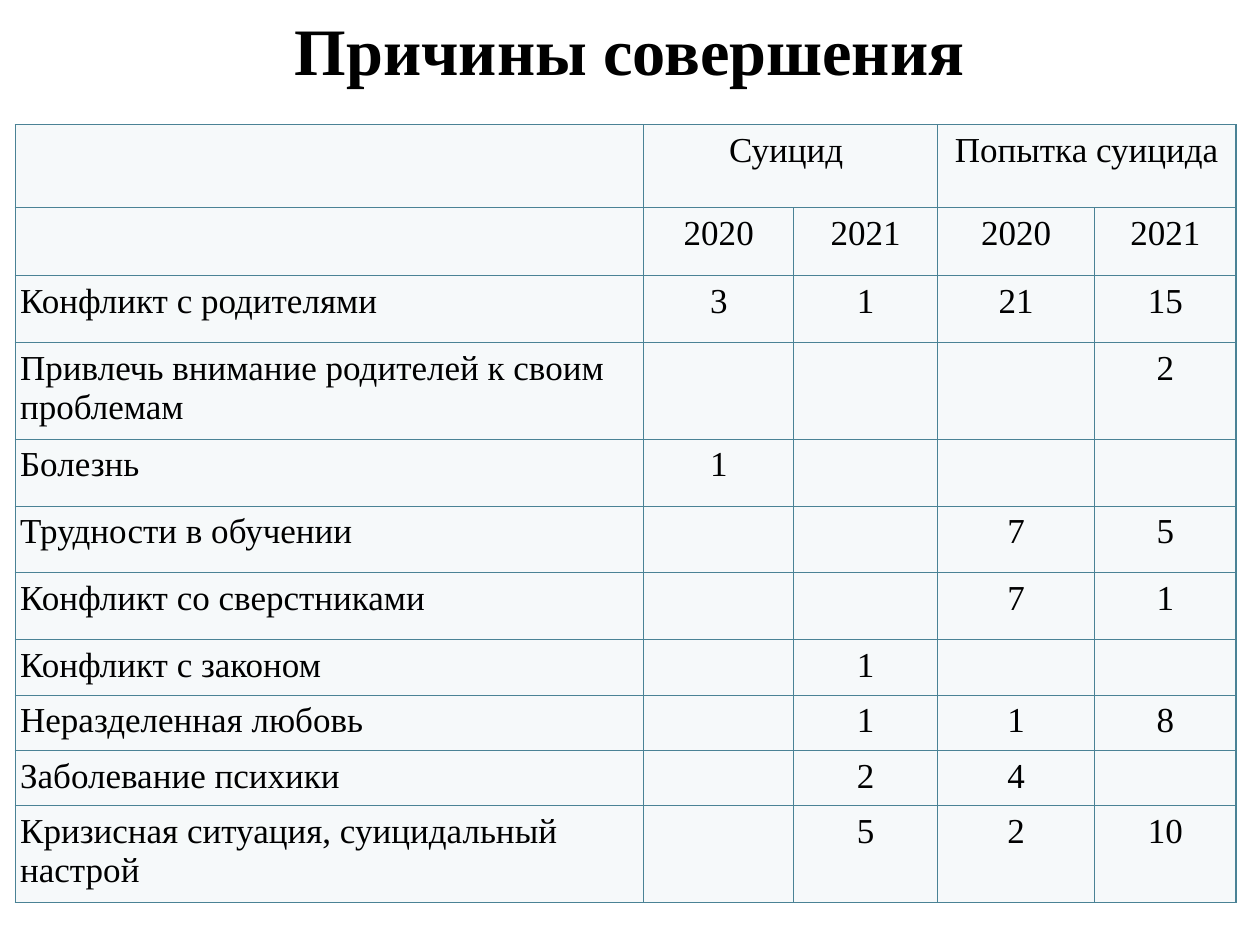
from dataclasses import dataclass

from lxml.etree import SubElement
from pptx import Presentation
from pptx.dml.color import RGBColor
from pptx.enum.text import MSO_ANCHOR, PP_ALIGN
from pptx.oxml.ns import qn
from pptx.util import Inches, Pt


@dataclass(frozen=True)
class Theme:
    font: str = "Times New Roman"
    ink: str = "000000"
    fill: str = "F6F9FA"
    line: str = "4A8295"
    title: float = 37.9
    body: float = 20
    rule: float = 0.75


TITLE = "Причины совершения"
COLS = [4.99, 1.19, 1.14, 1.25, 1.12]
# Height, then the text of each cell
ROWS = [
    (0.66, ["", "Суицид ", "", "Попытка суицида", ""]),
    (0.54, ["", "2020", "2021", "2020", "2021"]),
    (0.53, ["Конфликт с родителями", "3", "1", "21", "15"]),
    (0.66, ["Привлечь внимание родителей к своим проблемам", "", "", "", "2"]),
    (0.53, ["Болезнь", "1", "", "", ""]),
    (0.53, ["Трудности в обучении", "", "", "7", "5"]),
    (0.53, ["Конфликт со сверстниками", "", "", "7", "1"]),
    (0.44, ["Конфликт с законом", "", "1", "", ""]),
    (0.44, ["Неразделенная любовь", "", "1", "1", "8"]),
    (0.44, ["Заболевание психики", "", "2", "4", ""]),
    (0.66, ["Кризисная ситуация, суицидальный настрой", "", "5", "2", "10"]),
]
SPANS = [(0, 1, 2), (0, 3, 4)]  # row, first column, last column


class Page:
    def __init__(self, slide, theme):
        self.slide = slide
        self.theme = theme

    def label(self, frame, text, size, align, bold=False):
        para = frame.paragraphs[0]
        para.text = text
        para.alignment = align
        for run in para.runs:
            font = run.font
            font.name = self.theme.font
            font.size = Pt(size)
            font.bold = bold
            font.color.rgb = RGBColor.from_string(self.theme.ink)
        return para

    def title(self, text, left, top, width, height):
        box = self.slide.shapes.add_textbox(
            Inches(left), Inches(top), Inches(width), Inches(height))
        frame = box.text_frame
        frame.word_wrap = True
        frame.vertical_anchor = MSO_ANCHOR.MIDDLE
        para = self.label(frame, text, self.theme.title, PP_ALIGN.CENTER, True)
        para.line_spacing = 0.8

    def border(self, cell):
        props = cell._tc.get_or_add_tcPr()
        for side in ("lnL", "lnR", "lnT", "lnB"):
            line = SubElement(props, qn(f"a:{side}"), w=str(Pt(self.theme.rule)))
            fill = SubElement(line, qn("a:solidFill"))
            SubElement(fill, qn("a:srgbClr"), val=self.theme.line)

    def cell(self, cell, text, align):
        cell.margin_left = cell.margin_right = Inches(0.04)
        cell.margin_top = cell.margin_bottom = Inches(0.05)
        self.border(cell)
        cell.fill.solid()
        cell.fill.fore_color.rgb = RGBColor.from_string(self.theme.fill)
        if text:
            self.label(cell.text_frame, text, self.theme.body, align)

    def table(self, left, top, cols, rows, spans):
        high = sum(height for height, _ in rows)
        grid = self.slide.shapes.add_table(
            len(rows), len(cols), Inches(left), Inches(top),
            Inches(sum(cols)), Inches(high)).table
        for col, width in zip(grid.columns, cols):
            col.width = Inches(width)
        for r, (height, texts) in enumerate(rows):
            grid.rows[r].height = Inches(height)
            for c, text in enumerate(texts):
                align = PP_ALIGN.CENTER if c else PP_ALIGN.LEFT
                self.cell(grid.cell(r, c), text, align)
        for row, first, last in spans:
            grid.cell(row, first).merge(grid.cell(row, last))


def main():
    deck = Presentation()
    deck.slide_width, deck.slide_height = Inches(10), Inches(7.5)
    page = Page(deck.slides.add_slide(deck.slide_layouts[6]), Theme())
    page.title(TITLE, 0.5, 0.13, 9, 0.63)
    page.table(0.12, 0.99, COLS, ROWS, SPANS)
    deck.save("out.pptx")


if __name__ == "__main__":
    main()
